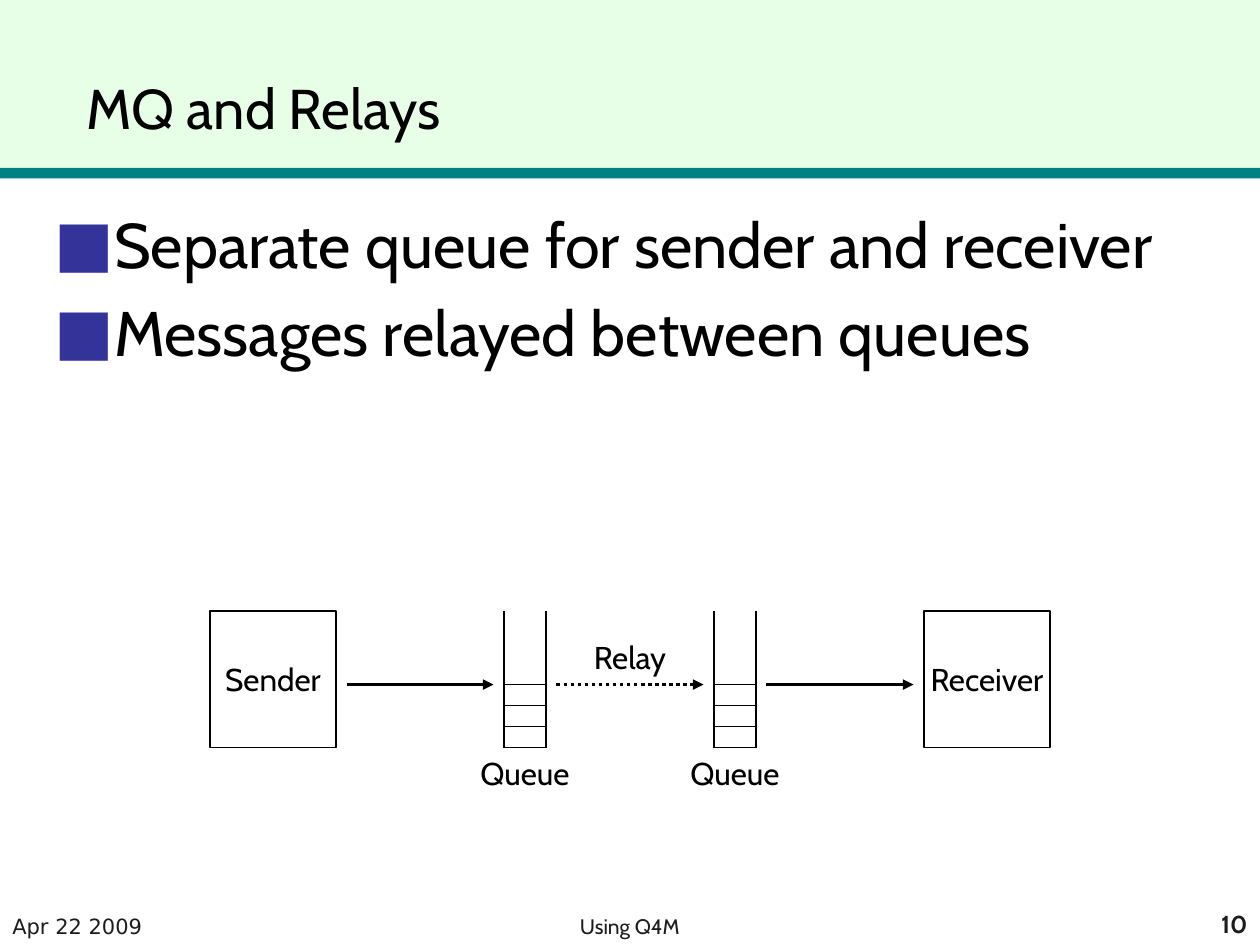
from dataclasses import dataclass

from lxml import etree
from pptx import Presentation
from pptx.dml.color import RGBColor
from pptx.enum.dml import MSO_LINE
from pptx.enum.shapes import MSO_CONNECTOR, MSO_SHAPE
from pptx.enum.text import MSO_ANCHOR, MSO_AUTO_SIZE, PP_ALIGN
from pptx.oxml import parse_xml
from pptx.oxml.ns import nsdecls, qn
from pptx.util import Inches, Pt

RECTANGLE, STRAIGHT = MSO_SHAPE.RECTANGLE, MSO_CONNECTOR.STRAIGHT
LEFT, CENTER, RIGHT = PP_ALIGN.LEFT, PP_ALIGN.CENTER, PP_ALIGN.RIGHT
TOP, MIDDLE, BOTTOM = MSO_ANCHOR.TOP, MSO_ANCHOR.MIDDLE, MSO_ANCHOR.BOTTOM
DOTTED = MSO_LINE.ROUND_DOT
NO_FIT = MSO_AUTO_SIZE.NONE

BLACK, WHITE, GRAY = "000000", "FFFFFF", "1C1C1C"
COLUMNS, ROWS = 120, 90
QUEUE_TOP, QUEUE_BOTTOM, ARROW_ROW = 58.2, 71.2, 65.2
QUEUE_WIDTH, SLOT_HEIGHT = 4, 2


@dataclass
class Area:
    column: float
    row: float
    columns: float
    rows: float

    def lengths(self) -> list[int]:
        return [grid(n) for n in (self.column, self.row, self.columns, self.rows)]


@dataclass
class Style:
    size: float = 18
    color: str = BLACK
    font: str = "Cabin"
    bold: bool = False
    align: PP_ALIGN = CENTER
    anchor: MSO_ANCHOR = TOP
    wrap: bool = False


@dataclass
class Label:
    text: str
    area: Area
    style: Style


@dataclass
class Arrow:
    start: float
    end: float
    dash: MSO_LINE | None = None


def grid(units: float) -> int:
    return Inches(units / 12)


def rgb(color: str) -> RGBColor:
    return RGBColor.from_string(color)


def write(shape, text: str, style: Style) -> None:
    frame = shape.text_frame
    frame.text = text
    frame.word_wrap = style.wrap
    frame.auto_size = NO_FIT
    frame.vertical_anchor = style.anchor
    for para in frame.paragraphs:
        para.alignment = style.align
        for span in para.runs:
            span.font.size = Pt(style.size)
            span.font.name = style.font
            span.font.bold = style.bold
            span.font.color.rgb = rgb(style.color)


def place(shape, area: Area) -> None:
    shape.left, shape.top, shape.width, shape.height = area.lengths()


def add_label(shapes, label: Label) -> None:
    write(shapes.add_textbox(*label.area.lengths()), label.text, label.style)


def add_rectangle(shapes, area: Area, fill: str, line: str | None = None):
    box = shapes.add_shape(RECTANGLE, *area.lengths())
    box.shadow.inherit = False
    box.fill.solid()
    box.fill.fore_color.rgb = rgb(fill)
    if line:
        box.line.color.rgb = rgb(line)
        box.line.width = Pt(0.75)
    else:
        box.line.fill.background()
    return box


def add_line(shapes, start: tuple, end: tuple, width: float = 0.75):
    line = shapes.add_connector(STRAIGHT, *map(grid, start + end))
    line.line.color.rgb = rgb(BLACK)
    line.line.width = Pt(width)
    etree.SubElement(line.element.spPr, qn("a:effectLst"))
    return line


def add_arrow(shapes, arrow: Arrow) -> None:
    line = add_line(shapes, (arrow.start, ARROW_ROW), (arrow.end, ARROW_ROW), 2)
    if arrow.dash:
        line.line.dash_style = arrow.dash
    etree.SubElement(line.line._get_or_add_ln(), qn("a:tailEnd"), type="triangle")


def add_queue(page, column: float) -> None:
    shapes = page.shapes.add_group_shape().shapes
    right = column + QUEUE_WIDTH
    for side in (column, right):
        add_line(shapes, (side, QUEUE_TOP), (side, QUEUE_BOTTOM))
    for slot in range(4):
        row = QUEUE_BOTTOM - slot * SLOT_HEIGHT
        add_line(shapes, (column, row), (right, row))
    add_label(shapes, Label("Queue", Area(column - 3.5, QUEUE_BOTTOM, 11, 4.8), Style()))


def add_title(page, text: str) -> None:
    title = page.shapes.title
    place(title, Area(7, 0, 113, 14))
    write(title, text, Style(32, align=LEFT, anchor=BOTTOM, wrap=True))
    page.shapes.element.append(title.element)
    shadow = parse_xml(
        f'<a:effectLst {nsdecls("a")}><a:outerShdw dist="35921" dir="2700000">'
        '<a:srgbClr val="C0C0C0"/></a:outerShdw></a:effectLst>'
    )
    span = title.text_frame.paragraphs[0].runs[0]
    span.font._element.find(qn("a:latin")).addprevious(shadow)


def add_bullets(page, lines: list[str]) -> None:
    body = page.placeholders[1]
    place(body, Area(4, 19, 116, 68))
    write(body, "\n".join(lines), Style(36, align=LEFT, wrap=True))
    for index, para in enumerate(body.text_frame.paragraphs):
        props = para._p.get_or_add_pPr()
        props.set("marL", str(Inches(0.38)))
        props.set("indent", str(-Inches(0.38)))
        color = etree.SubElement(props, qn("a:buClr"))
        etree.SubElement(color, qn("a:srgbClr"), val="333399")
        etree.SubElement(props, qn("a:buFont"), typeface="DejaVu Sans")
        etree.SubElement(props, qn("a:buChar"), char="■")
        para.space_before = Pt(7 if index else 0)


def main() -> None:
    deck = Presentation()
    deck.slide_width, deck.slide_height = grid(COLUMNS), grid(ROWS)
    page = deck.slides.add_slide(deck.slide_layouts[1])
    shapes = page.shapes

    add_rectangle(shapes, Area(0, 0, COLUMNS, 16), "E7FFE7")
    add_rectangle(shapes, Area(0, 16, COLUMNS, 1), "008080")
    add_title(page, "MQ and Relays")
    add_bullets(page, ["Separate queue for sender and receiver", "Messages relayed between queues"])

    for name, column in (("Sender", 20), ("Receiver", 88)):
        area = Area(column, QUEUE_TOP, 12, QUEUE_BOTTOM - QUEUE_TOP)
        write(add_rectangle(shapes, area, WHITE, BLACK), name, Style(anchor=MIDDLE))
    for column in (48, 68):
        add_queue(page, column)
    for arrow in (Arrow(33, 47), Arrow(53, 67, DOTTED), Arrow(73, 87)):
        add_arrow(shapes, arrow)

    labels = [
        Label("Relay", Area(55.2, 60.2, 9.6, 4.8), Style()),
        Label("Apr 22 2009", Area(0, 86, 25, 4),
              Style(12, GRAY, "DejaVu Sans", align=LEFT, anchor=BOTTOM, wrap=True)),
        Label("Using Q4M", Area(12, 86, 96, 4), Style(12, GRAY, anchor=BOTTOM, wrap=True)),
        Label("10", Area(95, 86, 25, 4),
              Style(14, GRAY, bold=True, align=RIGHT, anchor=BOTTOM, wrap=True)),
    ]
    for label in labels:
        add_label(shapes, label)

    deck.save("out.pptx")


if __name__ == "__main__":
    main()
